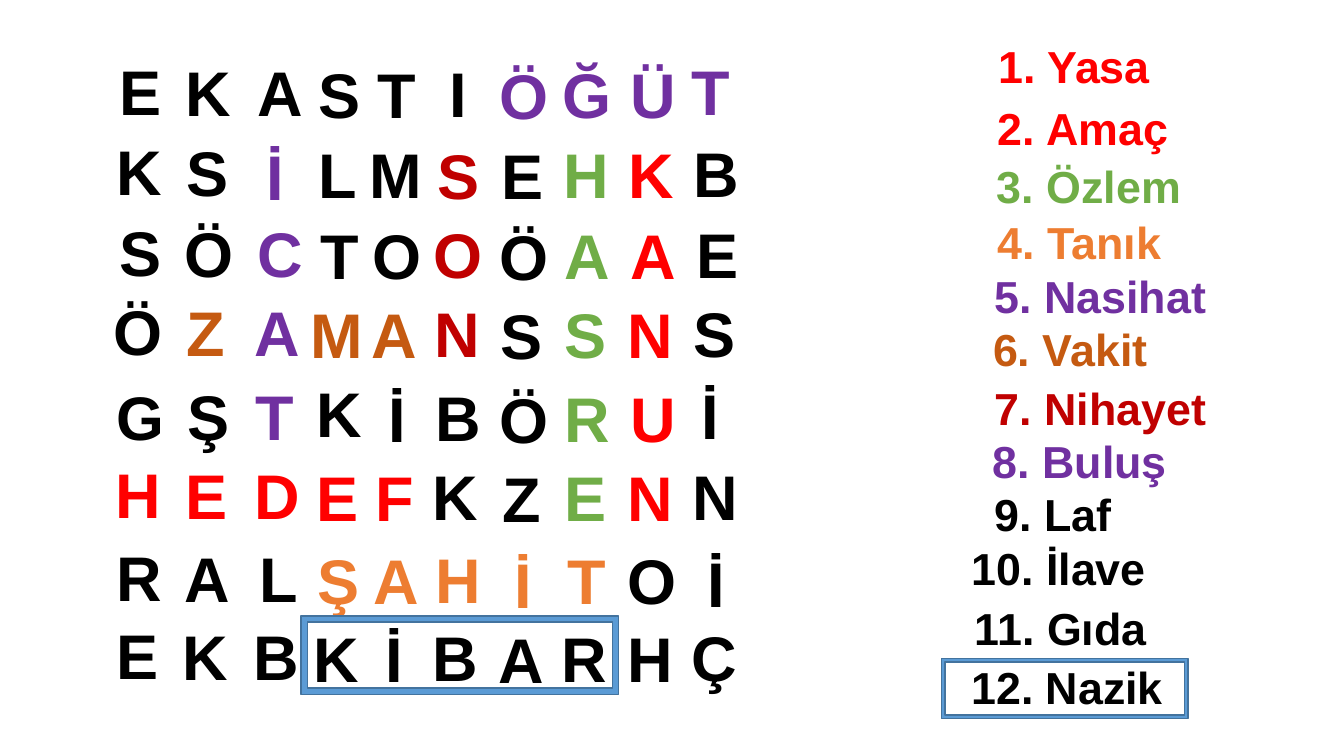
from pptx import Presentation
from pptx.dml.color import RGBColor
from pptx.enum import shapes, text
from pptx.util import Cm, Pt

COLOURS = {"k": "000000", "p": "7030A0", "r": "FF0000", "d": "C00000",
           "g": "70AD47", "b": "C55A11", "o": "ED7D31"}

COLUMN_LEFTS = [2.46, 4.17, 5.97, 7.47, 8.92, 10.46, 12.12, 13.72, 15.37, 16.99]
COLUMN_DROPS = [0, 0.03, 0.03, 0.08, 0.08, 0.05, 0.1, 0.08, 0.08, 0.05]

# letters, colour keys, top, shift to the right
ROWS = [
    ("EKASTIÖĞÜT", "kkkkkkpppp", 1.19, 0.03),
    ("KSİLMSEHKB", "kkpkkdkgrk", 3.0, 0),
    ("SÖCTOOÖAAE", "kkpkkdkgrk", 5.26, 0.03),
    ("ÖZAMANSSNS", "kbpbbdkgrk", 7.04, -0.03),
    ("GŞTKİBÖRUİ", "kkpkkkkgrk", 9.37, 0.03),
    ("HEDEFKZENN", "rrrrrkkgrk", 11.15, -0.03),
    ("RALŞAHİTOİ", "kkkoooookk", 13.44, 0),
    ("EKBKİBARHÇ", "kkkkkkkkkk", 15.19, -0.05),
]

# (row, column): shift right, shift down
NUDGES = {(0, 9): (-0.15, -0.05), (1, 2): (-0.08, 0.1), (1, 5): (0.03, 0.05),
          (3, 5): (0.05, 0), (4, 2): (-0.13, 0), (4, 3): (0, -0.13),
          (4, 9): (-0.18, -0.05), (6, 5): (0.03, 0), (6, 6): (0, 0.08),
          (6, 9): (0, 0.1)}

# word, colour key, left, top, width
WORDS = [
    ("1. Yasa", "r", 24.41, 0.79, 5.33),
    ("2. Amaç", "r", 24.36, 2.36, 5.87),
    ("3. Özlem", "g", 24.51, 3.81, 5.87),
    ("4. Tanık", "o", 24.54, 5.23, 5.33),
    ("5. Nasihat", "p", 24.51, 6.6, 6.45),
    ("6. Vakit", "b", 24.31, 7.92, 5.33),
    ("7. Nihayet", "d", 24.51, 9.42, 6.45),
    ("8. Buluş", "p", 24.28, 10.74, 5.87),
    ("9. Laf", "k", 23.88, 12.09, 5.33),
    ("10. İlave", "k", 23.75, 13.44, 5.87),
    ("11. Gıda", "k", 23.8, 14.96, 5.87),
    ("12. Nazik", "k", 23.67, 16.43, 6.45),
]


def rgb(hex_string):
    """Return the colour for a hex string."""
    return RGBColor.from_string(hex_string)


def write(sp, content, *, size, colour):
    """Fill a shape with one bold, centred line that sits at the bottom."""
    tf = sp.text_frame
    tf.word_wrap = True
    tf.auto_size = text.MSO_AUTO_SIZE.NONE
    tf.vertical_anchor = text.MSO_ANCHOR.BOTTOM
    p = tf.paragraphs[0]
    p.alignment = text.PP_ALIGN.CENTER
    p.line_spacing = 0.9
    r = p.add_run()
    r.text = content
    r.font.name = "Arial"
    r.font.size = Pt(size)
    r.font.bold = True
    r.font.color.rgb = rgb(colour)


def add_label(s, content, left, top, width, height, **style):
    """Add a text box with one formatted line."""
    sp = s.shapes.add_textbox(Cm(left), Cm(top), Cm(width), Cm(height))
    write(sp, content, **style)


def place_title(s, content, left, top, width, height, **style):
    """Move the title placeholder and write its line."""
    sp = s.shapes.title
    sp.left, sp.top, sp.width, sp.height = Cm(left), Cm(top), Cm(width), Cm(height)
    write(sp, content, **style)


def add_letter_grid(s):
    """Place the letters of the puzzle, the first one as the title."""
    for row, (letters, keys, row_top, shift) in enumerate(ROWS):
        height = 2.39 if row % 2 else 2.18
        for col, (letter, key) in enumerate(zip(letters, keys)):
            right, down = NUDGES.get((row, col), (0, 0))
            left = COLUMN_LEFTS[col] + shift + right
            top = row_top + COLUMN_DROPS[col] + down
            place = place_title if row == col == 0 else add_label
            size = 43.9 if letter == "G" else 45
            place(s, letter, left, top, 2.11, height, size=size, colour=COLOURS[key])


def add_frame(s, left, top, width, height, thickness):
    """Add a blue frame around a found word."""
    sp = s.shapes.add_shape(shapes.MSO_SHAPE.FRAME,
                            Cm(left), Cm(top), Cm(width), Cm(height))
    sp.adjustments[0] = thickness
    sp.shadow.inherit = False
    sp.fill.solid()
    sp.fill.fore_color.rgb = rgb("5B9BD5")
    sp.line.color.rgb = rgb("43739E")
    sp.line.width = Pt(1)


def main():
    """Build the word puzzle slide."""
    prs = Presentation()
    prs.slide_width, prs.slide_height = Cm(33.87), Cm(19.05)
    s = prs.slides.add_slide(prs.slide_layouts[0])
    subtitle = s.placeholders[1].element
    subtitle.getparent().remove(subtitle)
    add_letter_grid(s)
    for word, key, left, top, width in WORDS:
        add_label(s, word, left, top, width, 1.68, size=32, colour=COLOURS[key])
    add_frame(s, 23.72, 16.59, 6.22, 1.52, 0.06)
    add_frame(s, 7.59, 15.52, 8, 1.98, 0.08)
    prs.save("out.pptx")


if __name__ == "__main__":
    main()
